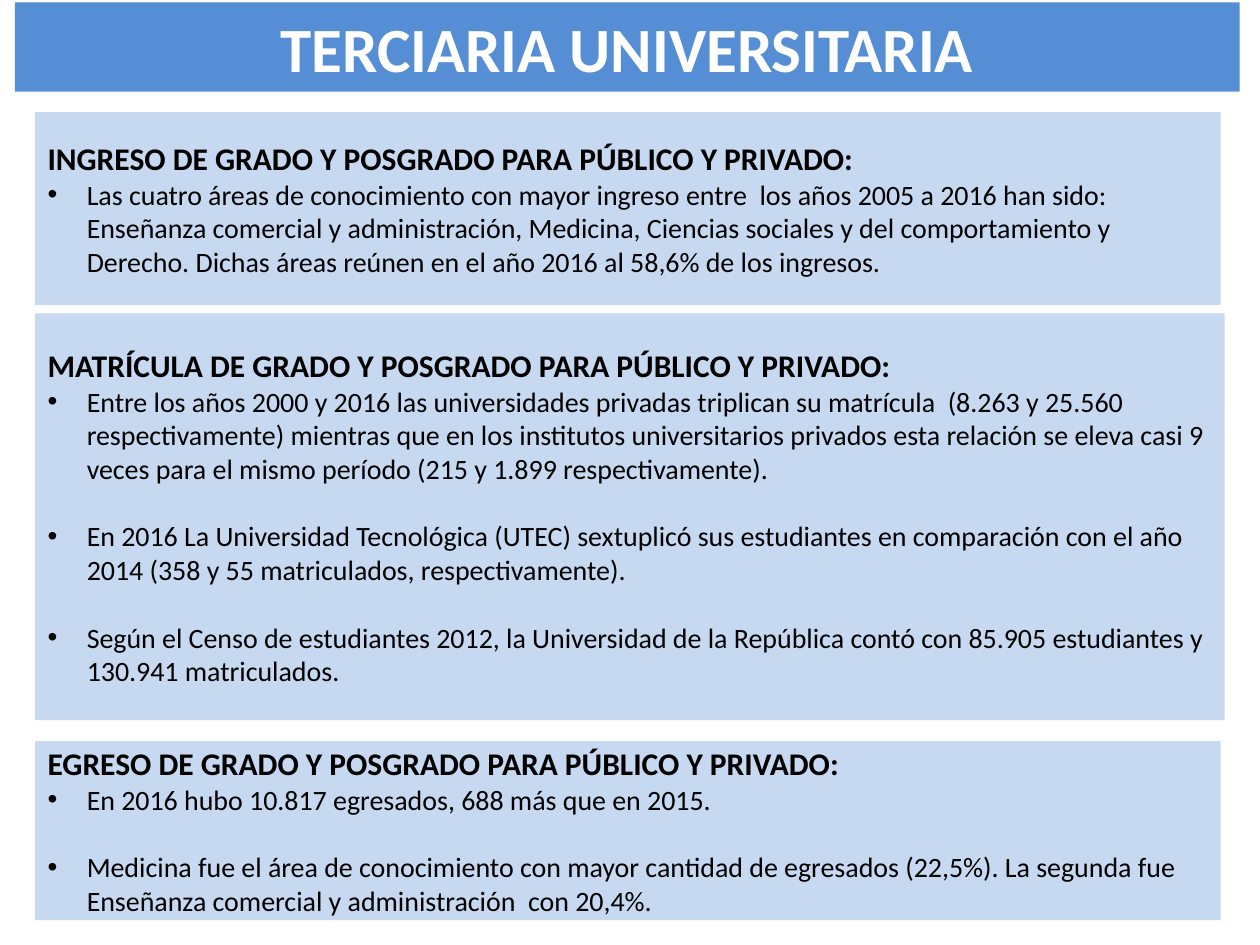
from dataclasses import dataclass

from lxml.etree import SubElement
from pptx import Presentation
from pptx.dml.color import RGBColor
from pptx.enum.shapes import MSO_SHAPE
from pptx.enum.text import MSO_ANCHOR, PP_ALIGN
from pptx.oxml.ns import qn
from pptx.shapes.autoshape import Shape
from pptx.slide import Slide
from pptx.text.text import _Paragraph as Paragraph
from pptx.util import Cm, Pt

FONT = "Calibri"
TITLE_FILL = "558ED5"
PANEL_FILL = "C6D9F1"
PANEL_LEFT = 0.71
BULLET_INDENT = Cm(0.79)
BULLET_GAP = 19.5


@dataclass
class Panel:
    """A heading with bullets; lengths are centimetres."""
    top: float
    width: float
    height: float
    heading: str
    bullets: list[str]


PANELS = [
    Panel(2.26, 23.9, 3.89, "INGRESO DE GRADO Y POSGRADO PARA PÚBLICO Y PRIVADO:", [
        "Las cuatro áreas de conocimiento con mayor ingreso entre  los años 2005 a 2016 "
        "han sido: Enseñanza comercial y administración, Medicina, Ciencias sociales y del "
        "comportamiento y Derecho. Dichas áreas reúnen en el año 2016 al 58,6% de los ingresos.",
    ]),
    Panel(6.32, 23.98, 8.2, "MATRÍCULA DE GRADO Y POSGRADO PARA PÚBLICO Y PRIVADO:", [
        "Entre los años 2000 y 2016 las universidades privadas triplican su matrícula  "
        "(8.263 y 25.560 respectivamente) mientras que en los institutos universitarios "
        "privados esta relación se eleva casi 9 veces para el mismo período "
        "(215 y 1.899 respectivamente).",
        "En 2016 La Universidad Tecnológica (UTEC) sextuplicó sus estudiantes en "
        "comparación con el año 2014 (358 y 55 matriculados, respectivamente).",
        "Según el Censo de estudiantes 2012, la Universidad de la República contó con "
        "85.905 estudiantes y 130.941 matriculados.",
    ]),
    Panel(14.94, 23.9, 3.61, "EGRESO DE GRADO Y POSGRADO PARA PÚBLICO Y PRIVADO:", [
        "En 2016 hubo 10.817 egresados, 688 más que en 2015.",
        "Medicina fue el área de conocimiento con mayor cantidad de egresados (22,5%). "
        "La segunda fue Enseñanza comercial y administración  con 20,4%.",
    ]),
]


def color(hex_code: str) -> RGBColor:
    return RGBColor.from_string(hex_code)


def add_box(slide: Slide, left: float, top: float, width: float, height: float,
            fill: str) -> Shape:
    shape = slide.shapes.add_shape(
        MSO_SHAPE.RECTANGLE, Cm(left), Cm(top), Cm(width), Cm(height))
    shape.shadow.inherit = False
    shape.fill.solid()
    shape.fill.fore_color.rgb = color(fill)
    shape.line.fill.background()
    frame = shape.text_frame
    frame.word_wrap = True
    frame.vertical_anchor = MSO_ANCHOR.MIDDLE
    frame.margin_top = frame.margin_bottom = 0
    return shape


def write(paragraph: Paragraph, text: str, *, size: float, bold: bool = False,
          text_color: str = "000000", align: PP_ALIGN = PP_ALIGN.LEFT,
          bullet: bool = False, space_before: float = 0) -> None:
    paragraph.alignment = align
    if space_before:
        paragraph.space_before = Pt(space_before)
    if bullet:
        properties = paragraph._p.get_or_add_pPr()
        properties.set("marL", str(BULLET_INDENT))
        properties.set("indent", str(-BULLET_INDENT))
        SubElement(properties, qn("a:buFont"), typeface="Arial")
        SubElement(properties, qn("a:buChar"), char="•")
    run = paragraph.add_run()
    run.text = text
    run.font.name = FONT
    run.font.size = Pt(size)
    run.font.bold = bold
    run.font.color.rgb = color(text_color)


def add_panel(slide: Slide, panel: Panel) -> None:
    shape = add_box(slide, PANEL_LEFT, panel.top, panel.width, panel.height, PANEL_FILL)
    frame = shape.text_frame
    write(frame.paragraphs[0], panel.heading, size=18, bold=True)
    for index, text in enumerate(panel.bullets):
        write(frame.add_paragraph(), text, size=16, bullet=True,
              space_before=BULLET_GAP if index else 0)


def main() -> None:
    presentation = Presentation()
    presentation.slide_width = Cm(25.4)
    presentation.slide_height = Cm(19.05)
    slide = presentation.slides.add_slide(presentation.slide_layouts[6])

    title = add_box(slide, 0.3, 0.05, 24.69, 1.8, TITLE_FILL)
    write(title.text_frame.paragraphs[0], "TERCIARIA UNIVERSITARIA", size=36, bold=True,
          text_color="FFFFFF", align=PP_ALIGN.CENTER)
    for panel in PANELS:
        add_panel(slide, panel)

    presentation.save("out.pptx")


if __name__ == "__main__":
    main()
